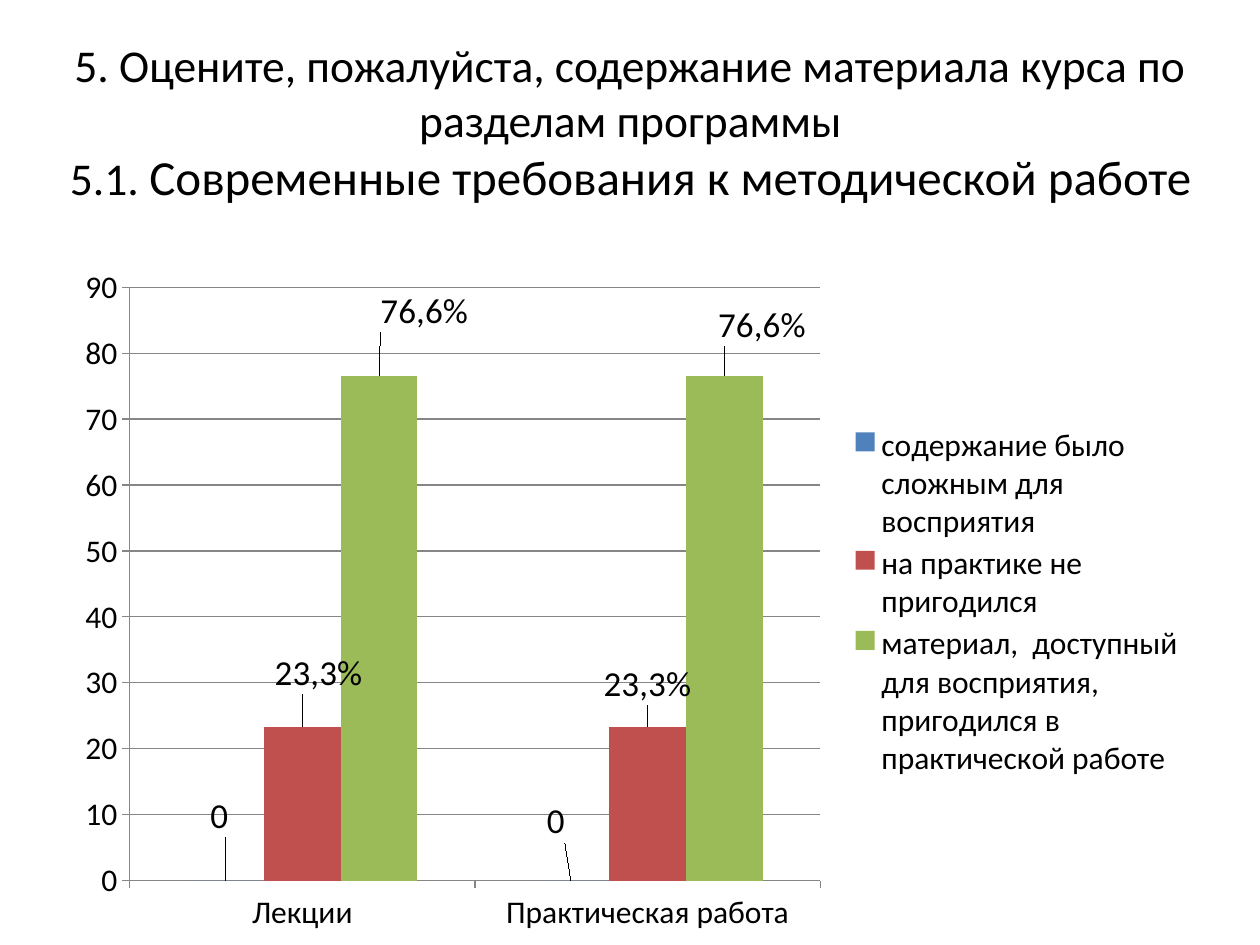
import pptx
import pptx.chart.data
import pptx.dml.color
import pptx.enum.chart
import pptx.enum.text
import pptx.oxml
import pptx.oxml.ns
import pptx.util

Inches = pptx.util.Inches

TITLE_LINES = [
    [("5. Оцените, пожалуйста, содержание материала курса по разделам программы", 26)],
    [("5.1. ", 26), ("Современные требования к методической работе", 28)],
]
CATEGORIES = ["Лекции", "Практическая работа"]
SERIES = [
    {"name": "содержание было сложным для восприятия", "values": (0, 0),
     "color": "4F81BD", "label": None, "offsets": [(-0.05, -0.3), (-0.12, -0.26)]},
    {"name": "на практике не пригодился", "values": (23.3, 23.3),
     "color": "C0504D", "label": "23,3%", "offsets": [(0.13, -0.22), (0, -0.13)]},
    {"name": "материал,  доступный для восприятия, пригодился в практической работе",
     "values": (76.6, 76.6),
     "color": "9BBB59", "label": "76,6%", "offsets": [(0.36, -0.3), (0.3, -0.19)]},
]


def color(value):
    return pptx.dml.color.RGBColor.from_string(value)


def apply(target, values):
    for name, value in values.items():
        setattr(target, name, value)


def layout(chart_size, **lengths):
    """Return a manual chart layout, with lengths in inches made into fractions."""
    width, height = chart_size
    target = '<c:layoutTarget val="inner"/>' if lengths.pop("inner", False) else ""
    modes = ""
    if lengths.pop("edge", False):
        modes = '<c:xMode val="edge"/><c:yMode val="edge"/>'
    parts = "".join(
        f'<c:{name} val="{length / (width if name in "xw" else height):.4f}"/>'
        for name, length in lengths.items())
    return pptx.oxml.parse_xml(
        f'<c:layout {pptx.oxml.ns.nsdecls("c")}><c:manualLayout>'
        f'{target}{modes}{parts}</c:manualLayout></c:layout>')


class SlideBuilder:
    """Holds the style and the current slide."""

    font_name = "Calibri"
    text_color = "000000"
    line_color = "868686"

    def __init__(self, presentation):
        self.slide = presentation.slides.add_slide(presentation.slide_layouts[5])

    def format_font(self, font, size):
        apply(font, {"name": self.font_name, "size": pptx.util.Pt(size), "bold": False})
        font.color.rgb = color(self.text_color)

    def format_line(self, line):
        line.color.rgb = color(self.line_color)
        line.width = pptx.util.Pt(0.75)

    def title(self, lines, left, top, width, height):
        shape = self.slide.shapes.title
        apply(shape, {"left": Inches(left), "top": Inches(top),
                      "width": Inches(width), "height": Inches(height)})
        apply(shape.text_frame, {
            "word_wrap": True,
            "auto_size": pptx.enum.text.MSO_AUTO_SIZE.NONE,
            "vertical_anchor": pptx.enum.text.MSO_ANCHOR.MIDDLE})
        paragraph = shape.text_frame.paragraphs[0]
        paragraph.alignment = pptx.enum.text.PP_ALIGN.CENTER
        for index, line in enumerate(lines):
            if index:
                paragraph.add_line_break()
            for text, size in line:
                run = paragraph.add_run()
                run.text = text
                self.format_font(run.font, size)

    def column_chart(self, categories, series_list, left, top, width, height):
        data = pptx.chart.data.CategoryChartData()
        data.categories = categories
        for entry in series_list:
            data.add_series(entry["name"], entry["values"])
        chart = self.slide.shapes.add_chart(
            pptx.enum.chart.XL_CHART_TYPE.COLUMN_CLUSTERED,
            Inches(left), Inches(top), Inches(width), Inches(height), data).chart
        chart.has_title = False
        self.format_font(chart.font, 18)
        size = (width, height)
        self.axes(chart)
        self.legend(chart, size)
        apply(chart.plots[0], {"gap_width": 150, "overlap": 0, "vary_by_categories": False})
        for series, entry in zip(chart.plots[0].series, series_list):
            series.format.fill.solid()
            series.format.fill.fore_color.rgb = color(entry["color"])
            self.labels(series, entry["label"])
        offsets = [offset for entry in series_list for offset in entry["offsets"]]
        for label, (x, y) in zip(chart.element.xpath(".//c:dLbl"), offsets):
            label.insert(1, layout(size, x=x, y=y))
        plot_area = chart.element.xpath(".//c:plotArea")[0]
        for old_layout in plot_area.xpath("./c:layout"):
            plot_area.remove(old_layout)
        plot_area.insert(0, layout(size, inner=True, edge=True, x=0.53, y=0.26, w=5.48, h=4.71))

    def axes(self, chart):
        for axis in (chart.category_axis, chart.value_axis):
            axis.major_tick_mark = pptx.enum.chart.XL_TICK_MARK.OUTSIDE
            self.format_line(axis.format.line)
        apply(chart.value_axis, {"minimum_scale": 0, "maximum_scale": 90,
                                 "major_unit": 10, "has_major_gridlines": True})
        self.format_line(chart.value_axis.major_gridlines.format.line)

    def legend(self, chart, size):
        chart.has_legend = True
        apply(chart.legend, {"position": pptx.enum.chart.XL_LEGEND_POSITION.RIGHT,
                             "include_in_layout": False})
        legend = chart.element.xpath(".//c:legend")[0]
        for old_layout in legend.xpath("./c:layout"):
            legend.remove(old_layout)
        legend.insert(1, layout(size, edge=True, x=6.22, y=1.33, w=2.7, h=2.85))

    def labels(self, series, text):
        apply(series.data_labels, {"show_value": True})
        self.format_font(series.data_labels.font, 20)
        for index in range(len(series.values)):
            label = series.points[index].data_label
            if text:
                run = label.text_frame.paragraphs[0].add_run()
                run.text = text
                self.format_font(run.font, 20)
            else:
                self.format_font(label.font, 20)
            label.position = pptx.enum.chart.XL_LABEL_POSITION.OUTSIDE_END


def main():
    presentation = pptx.Presentation()
    apply(presentation, {"slide_width": Inches(10), "slide_height": Inches(7.5)})
    builder = SlideBuilder(presentation)
    builder.title(TITLE_LINES, 0.2, 0.3, 9.61, 1.32)
    builder.column_chart(CATEGORIES, SERIES, 0.5, 2.02, 9, 5.48)
    presentation.save("out.pptx")


if __name__ == "__main__":
    main()
